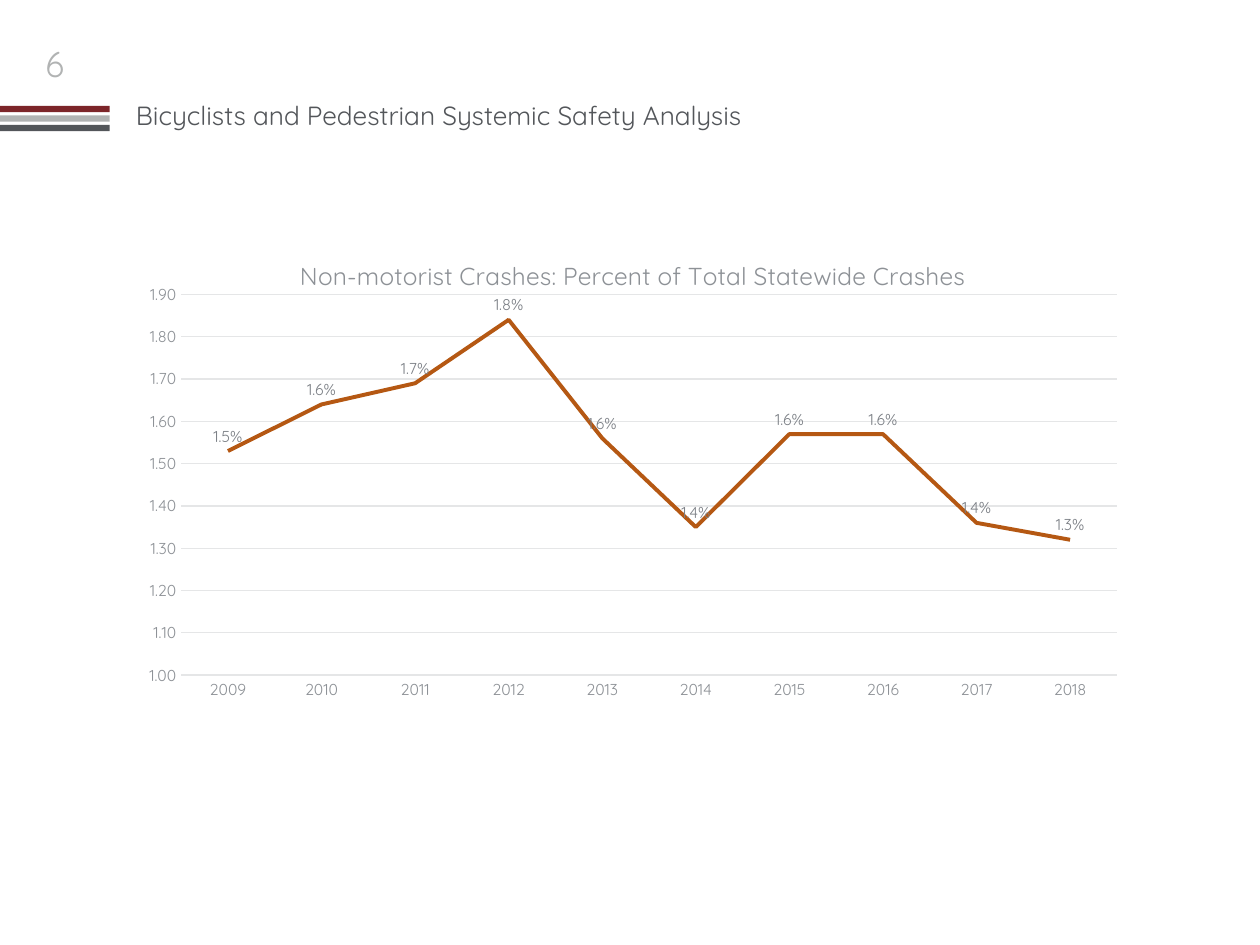
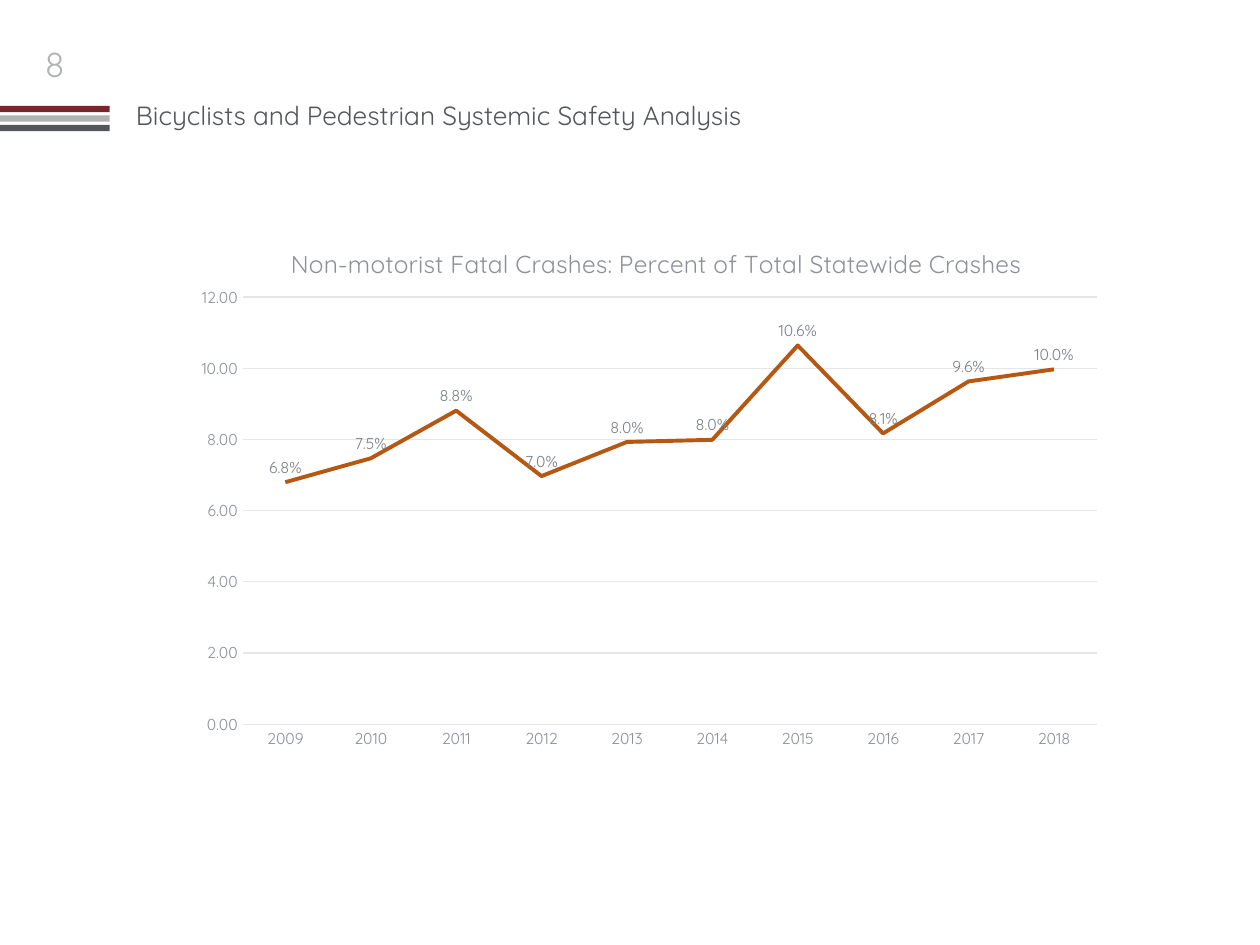
from lxml import etree
from pptx import Presentation
from pptx.chart.data import CategoryChartData
from pptx.dml.color import RGBColor
from pptx.enum.chart import XL_CHART_TYPE as ChartType
from pptx.enum.chart import XL_LABEL_POSITION as LabelPosition
from pptx.enum.chart import XL_TICK_MARK as TickMark
from pptx.enum.shapes import MSO_SHAPE as Shape
from pptx.enum.text import PP_ALIGN as Align
from pptx.oxml.ns import qn
from pptx.util import Inches, Pt

FONT = "Quicksand"
MAROON, SILVER, SLATE = "7C2529", "B1B3B3", "53565A"
AXIS_GRAY, LABEL_GRAY, GRID_GRAY, ORANGE = "8D9196", "7C8086", "E5E6E7", "B55813"
TITLE = "Bicyclists and Pedestrian Systemic Safety Analysis"
YEARS = [str(year) for year in range(2009, 2019)]

CRASH_SLIDES = [
    {
        "number": 6,
        "title": "Non-motorist Crashes: Percent of Total Statewide Crashes",
        "area": (0.98, 1.82, 8.03, 3.86),
        "title_at": {"x": 0.17, "y": 0.05},
        "plot_at": {"x": 0.057, "y": 0.134, "w": 0.925, "h": 0.783},
        "scale": {"minimum_scale": 1, "maximum_scale": 1.9, "major_unit": 0.1},
        "values": [1.53, 1.64, 1.69, 1.84, 1.56, 1.35, 1.57, 1.57, 1.36, 1.32],
        "labels": "1.5% 1.6% 1.7% 1.8% 1.6% 1.4% 1.6% 1.6% 1.4% 1.3%",
    },
    {
        "number": 8,
        "title": "Non-motorist Fatal Crashes: Percent of Total Statewide Crashes",
        "area": (1.46, 1.7, 7.4, 4.33),
        "title_at": {"x": 0.11, "y": 0.05},
        "plot_at": {"x": 0.063, "y": 0.152, "w": 0.916, "h": 0.783},
        "scale": {"minimum_scale": 0, "maximum_scale": 12, "major_unit": 2},
        "values": [6.8, 7.47, 8.81, 6.97, 7.93, 7.99, 10.64, 8.17, 9.63, 9.97],
        "labels": "6.8% 7.5% 8.8% 7.0% 8.0% 8.0% 10.6% 8.1% 9.6% 10.0%",
    },
]


def color(hex_value):
    return RGBColor.from_string(hex_value)


def set_values(target, values):
    for name, value in values.items():
        setattr(target, name, value)


def set_font(font, size, hex_value):
    set_values(font, {"name": FONT, "size": Pt(size), "bold": False})
    font.color.rgb = color(hex_value)


def set_line(line, width, hex_value):
    line.width = Pt(width)
    line.color.rgb = color(hex_value)


def place(parent, index, position, inner=False):
    """Give a chart part a manual layout, in fractions of the chart."""
    for old in parent.findall(qn("c:layout")):
        parent.remove(old)
    layout = etree.Element(qn("c:layout"))
    manual = etree.SubElement(layout, qn("c:manualLayout"))
    settings = {"layoutTarget": "inner"} if inner else {}
    settings.update(xMode="edge", yMode="edge", **position)
    for name, value in settings.items():
        etree.SubElement(manual, qn(f"c:{name}")).set("val", str(value))
    parent.insert(index, layout)


class SlideBuilder:
    def __init__(self):
        self.deck = Presentation()
        set_values(self.deck, {"slide_width": Inches(10), "slide_height": Inches(7.5)})
        self.page = None

    def text(self, words, area, size, hex_value, align=Align.LEFT):
        box = self.page.shapes.add_textbox(*map(Inches, area))
        box.text_frame.word_wrap = True
        para = box.text_frame.paragraphs[0]
        para.alignment = align
        span = para.add_run()
        span.text = words
        set_font(span.font, size, hex_value)

    def band(self, area, hex_value):
        shape = self.page.shapes.add_shape(Shape.RECTANGLE, *map(Inches, area))
        shape.shadow.inherit = False
        shape.fill.solid()
        shape.fill.fore_color.rgb = color(hex_value)
        shape.line.fill.background()

    def new_page(self, number):
        self.page = self.deck.slides.add_slide(self.deck.slide_layouts[6])
        self.text(TITLE, (0.98, 0.74, 5.59, 0.35), 15, SLATE)
        for row, hex_value in enumerate((MAROON, SILVER, SLATE)):
            self.band((0, 0.84 + row * 0.15 / 2, 0.87, 0.05), hex_value)
        self.text(str(number), (0, 0.29, 0.87, 0.44), 20, SILVER, Align.CENTER)

    def line_chart(self, title, area, title_at, plot_at, scale, values, labels):
        data = CategoryChartData(number_format="0.00")
        data.categories = YEARS
        data.add_series("Series 1", values)
        frame = self.page.shapes.add_chart(ChartType.LINE, *map(Inches, area), data)
        chart = frame.chart
        chart.has_legend = False
        set_font(chart.font, 10, SLATE)
        self.chart_title(chart, title, title_at)
        self.axes(chart, scale)
        self.series(chart.plots[0], labels.split())
        plot_area = chart.plots[0]._element.getparent()
        place(plot_area, 0, plot_at, inner=True)

    def chart_title(self, chart, words, position):
        chart.has_title = True
        span = chart.chart_title.text_frame.paragraphs[0].add_run()
        span.text = words
        set_font(span.font, 14, AXIS_GRAY)
        chart.chart_title.include_in_layout = False
        place(chart.chart_title._element, 1, position)

    def axes(self, chart, scale):
        for axis in (chart.category_axis, chart.value_axis):
            set_values(axis, {"major_tick_mark": TickMark.NONE,
                              "minor_tick_mark": TickMark.NONE})
            set_font(axis.tick_labels.font, 9, AXIS_GRAY)
        set_line(chart.category_axis.format.line, 0.75, GRID_GRAY)
        axis = chart.value_axis
        set_values(axis, {"has_major_gridlines": True, **scale})
        set_values(axis.tick_labels, {"number_format": "0.00",
                                      "number_format_is_linked": False})
        axis.format.line.fill.background()
        set_line(axis.major_gridlines.format.line, 0.75, GRID_GRAY)

    def series(self, plot, labels):
        plot.vary_by_categories = False
        series = plot.series[0]
        series.smooth = False
        set_line(series.format.line, 2.25, ORANGE)
        set_values(series.data_labels, {"show_value": True,
                                        "position": LabelPosition.ABOVE})
        set_font(series.data_labels.font, 9, LABEL_GRAY)
        for index, words in enumerate(labels):
            label = series.points[index].data_label
            span = label.text_frame.paragraphs[0].add_run()
            span.text = words
            set_font(span.font, 9, LABEL_GRAY)
            label.position = LabelPosition.ABOVE


def main():
    builder = SlideBuilder()
    for content in CRASH_SLIDES:
        chart = dict(content)
        builder.new_page(chart.pop("number"))
        builder.line_chart(**chart)
    builder.deck.save("out.pptx")


if __name__ == "__main__":
    main()
